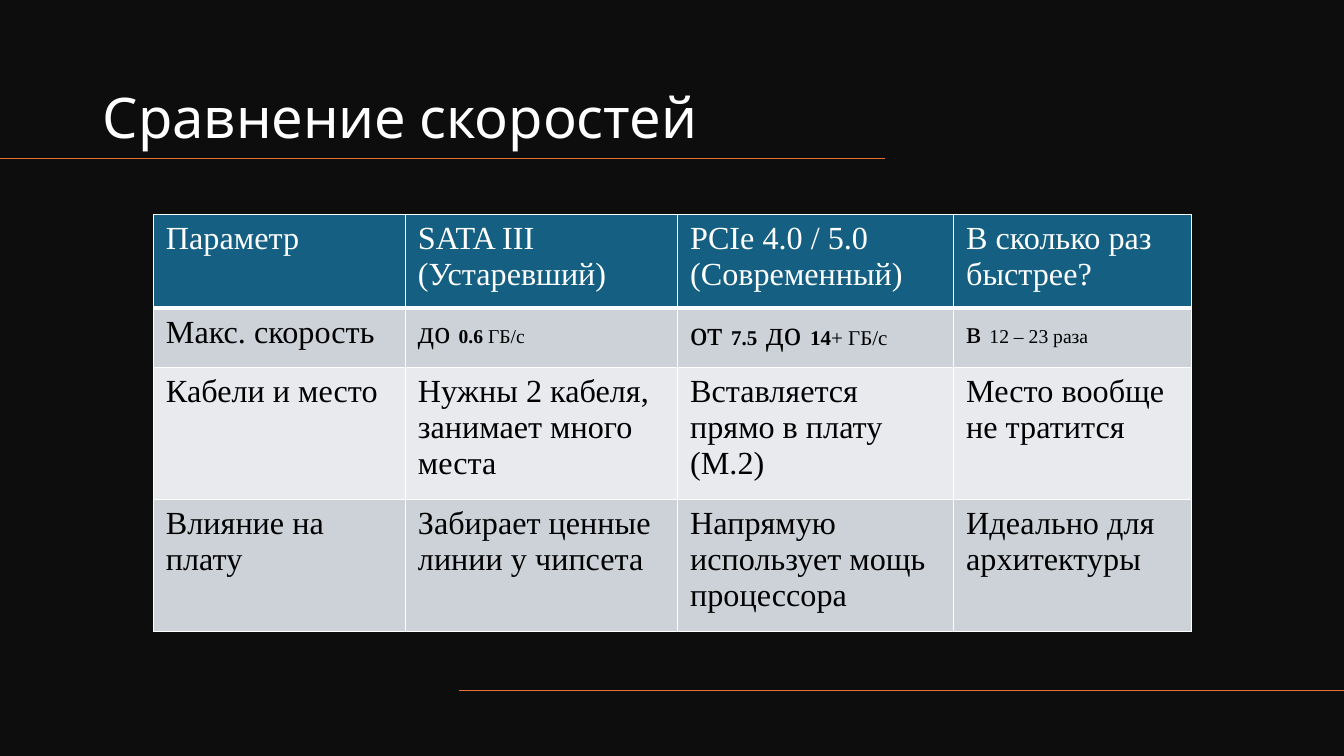
from dataclasses import dataclass

import pptx
import pptx.dml.color
import pptx.enum.shapes
import pptx.enum.text
import pptx.oxml
import pptx.oxml.ns
import pptx.util
from pptx.util import Pt


@dataclass(frozen=True)
class Theme:
    background: str = "0D0D0D"
    accent: str = "E97132"
    light: str = "FFFFFF"
    dark: str = "000000"
    header_fill: str = "156082"
    band_fills: tuple[str, str] = ("CCD2D8", "E8EAED")
    title_font: str = "Karla"
    table_font: str = "Times New Roman"
    title_size: float = 40
    table_size: float = 23
    large_size: float = 25
    small_size: float = 14
    medium_size: float = 15


THEME = Theme()
PAGE_WIDTH, PAGE_HEIGHT = 960, 540


@dataclass(frozen=True)
class Span:
    text: str
    size: float = THEME.table_size
    bold: bool = False


@dataclass(frozen=True)
class Rule:
    start: float
    end: float
    top: float


RULES = [Rule(632.16, 0, 113.4), Rule(PAGE_WIDTH, 327.84, 493.2)]

TABLE_LEFT, TABLE_TOP = 109.44, 153.2
COLUMN_WIDTHS = [180, 194.4, 197.2, 169.9]
ROW_HEIGHTS = [67, 42.4, 94.3, 94.3]
CELL_MARGINS = (9.1, 4.55)
THIN_BORDER, HEADER_BORDER = 1, 3

# Each cell is a list of spans
CONTENT = [
    [
        [Span("Параметр")],
        [Span("SATA III (Устаревший)")],
        [Span("PCIe 4.0 / 5.0 (Современный)")],
        [Span("В сколько раз быстрее?")],
    ],
    [
        [Span("Макс. скорость")],
        [Span("до "), Span("0.6 ", THEME.small_size, True), Span("ГБ/с", THEME.small_size)],
        [
            Span("от ", THEME.large_size),
            Span("7.5", THEME.medium_size, True),
            Span(" до ", THEME.large_size),
            Span("14", THEME.medium_size, True),
            Span("+ ГБ/с", THEME.medium_size),
        ],
        [Span("в "), Span("12 – 23 раза", THEME.small_size)],
    ],
    [
        [Span("Кабели и место")],
        [Span("Нужны 2 кабеля, занимает много места")],
        [Span("Вставляется прямо в плату (M.2)")],
        [Span("Место вообще не тратится")],
    ],
    [
        [Span("Влияние на плату")],
        [Span("Забирает ценные линии у чипсета")],
        [Span("Напрямую использует мощь процессора")],
        [Span("Идеально для архитектуры")],
    ],
]


def color(value: str) -> pptx.dml.color.RGBColor:
    return pptx.dml.color.RGBColor.from_string(value)


def add_backdrop(page) -> None:
    box = page.shapes.add_shape(
        pptx.enum.shapes.MSO_SHAPE.RECTANGLE, 0, 0, Pt(PAGE_WIDTH), Pt(PAGE_HEIGHT))
    box.shadow.inherit = False
    box.fill.solid()
    box.fill.fore_color.rgb = color(THEME.background)
    box.line.fill.background()
    # Place it behind the title
    page.shapes.title.element.addprevious(box.element)


def fill_title(page, text: str) -> None:
    title = page.shapes.title
    title.left, title.top, title.width, title.height = Pt(66.24), Pt(30.24), Pt(566), Pt(80.64)
    frame = title.text_frame
    frame.text = text
    frame.word_wrap = True
    frame.auto_size = pptx.enum.text.MSO_AUTO_SIZE.NONE
    frame.vertical_anchor = pptx.enum.text.MSO_ANCHOR.BOTTOM
    para = frame.paragraphs[0]
    para.alignment = pptx.enum.text.PP_ALIGN.LEFT
    para.line_spacing = 0.9
    font = para.runs[0].font
    font.name = THEME.title_font
    font.size = Pt(THEME.title_size)
    font.color.rgb = color(THEME.light)


def add_rule(page, rule: Rule) -> None:
    line = page.shapes.add_connector(
        pptx.enum.shapes.MSO_CONNECTOR.STRAIGHT,
        Pt(rule.start), Pt(rule.top), Pt(rule.end), Pt(rule.top))
    line.line.color.rgb = color(THEME.accent)
    line.line.width = Pt(1)
    line.element.spPr.append(pptx.oxml.parse_xml(
        f"<a:effectLst {pptx.oxml.ns.nsdecls('a')}/>"))


def set_borders(cell, top: float, bottom: float) -> None:
    properties = cell._tc.get_or_add_tcPr()
    widths = {"lnL": THIN_BORDER, "lnR": THIN_BORDER, "lnT": top, "lnB": bottom}
    for side, width in widths.items():
        properties.append(pptx.oxml.parse_xml(
            f'<a:{side} {pptx.oxml.ns.nsdecls("a")} w="{Pt(width)}">'
            f'<a:solidFill><a:srgbClr val="{THEME.light}"/></a:solidFill></a:{side}>'))


def fill_cell(cell, spans: list[Span], row: int) -> None:
    cell.margin_left = cell.margin_right = Pt(CELL_MARGINS[0])
    cell.margin_top = cell.margin_bottom = Pt(CELL_MARGINS[1])
    set_borders(cell,
                top=HEADER_BORDER if row == 1 else THIN_BORDER,
                bottom=HEADER_BORDER if row == 0 else THIN_BORDER)
    cell.fill.solid()
    cell.fill.fore_color.rgb = color(
        THEME.band_fills[(row - 1) % 2] if row else THEME.header_fill)
    para = cell.text_frame.paragraphs[0]
    for span in spans:
        run = para.add_run()
        run.text = span.text
        run.font.name = THEME.table_font
        run.font.size = Pt(span.size)
        run.font.bold = span.bold
        run.font.color.rgb = color(THEME.dark if row else THEME.light)


def add_comparison(page) -> None:
    table = page.shapes.add_table(
        len(ROW_HEIGHTS), len(COLUMN_WIDTHS), Pt(TABLE_LEFT), Pt(TABLE_TOP),
        Pt(sum(COLUMN_WIDTHS)), Pt(sum(ROW_HEIGHTS))).table
    for column, width in zip(table.columns, COLUMN_WIDTHS):
        column.width = Pt(width)
    for index, (height, cells) in enumerate(zip(ROW_HEIGHTS, CONTENT)):
        table.rows[index].height = Pt(height)
        for cell, spans in zip(table.rows[index].cells, cells):
            fill_cell(cell, spans, index)


def main() -> None:
    deck = pptx.Presentation()
    deck.slide_width, deck.slide_height = Pt(PAGE_WIDTH), Pt(PAGE_HEIGHT)
    page = deck.slides.add_slide(deck.slide_layouts.get_by_name("Title Only"))

    # Backdrop, title and accent rules
    add_backdrop(page)
    fill_title(page, "Сравнение скоростей")
    for rule in RULES:
        add_rule(page, rule)

    # Comparison table
    add_comparison(page)
    deck.save("out.pptx")


if __name__ == "__main__":
    main()
